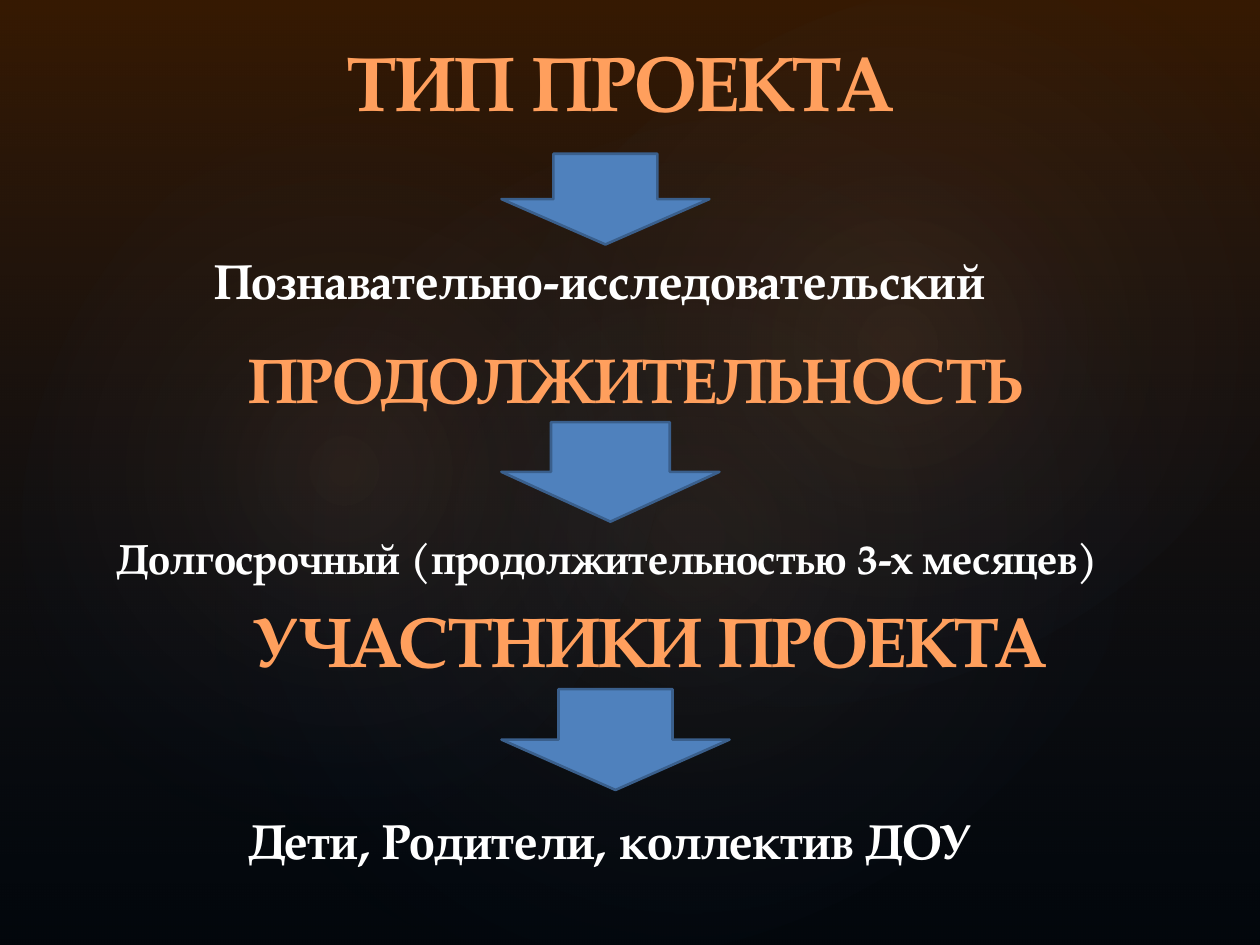
from lxml import etree
from pptx import Presentation
from pptx.dml.color import RGBColor
from pptx.enum.shapes import MSO_SHAPE
from pptx.enum.text import MSO_ANCHOR, MSO_AUTO_SIZE, PP_ALIGN
from pptx.oxml.ns import qn
from pptx.util import Inches, Pt

RECT, OVAL, DOWN_ARROW = MSO_SHAPE.RECTANGLE, MSO_SHAPE.OVAL, MSO_SHAPE.DOWN_ARROW
LEFT, CENTER = PP_ALIGN.LEFT, PP_ALIGN.CENTER
TOP, NO_AUTOFIT = MSO_ANCHOR.TOP, MSO_AUTO_SIZE.NONE
FONT = "TeX Gyre Pagella"
COLORS = {
    "black": "000000", "white": "FFFFFF", "brown": "984807", "navy": "1F497D",
    "peach": "FAC090", "arrow": "4F81BD", "arrow_line": "3A5F8C",
    "edge": "FFA367", "light": "FF9F5D", "deep": "F38E3A",
}
HEADING_STOPS = [(0, "edge", 100), (25, "light", 100), (50, "deep", 100),
                 (75, "light", 100), (100, "edge", 100)]


def rgb(name):
    return RGBColor.from_string(COLORS[name])


def set_gradient(fill, props, stops, radial=False):
    """Give props (spPr or rPr) a gradient; stops are (position, colour, opacity) with percents."""
    fill.gradient()
    grad = props.find(qn("a:gradFill"))
    grad.clear()
    grad.set("rotWithShape", "1")
    gs_list = etree.SubElement(grad, qn("a:gsLst"))
    for pos, color, opacity in stops:
        gs = etree.SubElement(gs_list, qn("a:gs"), pos=str(pos * 1000))
        clr = etree.SubElement(gs, qn("a:srgbClr"), val=COLORS[color])
        if opacity < 100:
            etree.SubElement(clr, qn("a:alpha"), val=str(opacity * 1000))
    if radial:
        circle = etree.SubElement(grad, qn("a:path"), path="circle")
        etree.SubElement(circle, qn("a:fillToRect"),
                         {side: "50000" for side in "ltrb"})
    else:
        etree.SubElement(grad, qn("a:lin"), ang="5400000", scaled="0")


def add_shape(s, kind, box):
    sp = s.shapes.add_shape(kind, *map(Inches, box))
    sp.shadow.inherit = False
    return sp


def add_backdrop(s):
    s.background.fill.solid()
    s.background.fill.fore_color.rgb = rgb("black")
    wash = add_shape(s, RECT, (0, 0, 10, 7.5))
    wash.line.fill.background()
    set_gradient(wash.fill, wash._element.spPr, [(0, "brown", 36), (100, "navy", 10)])
    for box, angle, opacity in [((1.5, 1.14, 7.92, 6.24), 328.7, 7),
                                ((-0.3, 1.28, 6.06, 4.9), 294.3, 8),
                                ((3.58, 0.13, 7.09, 5.2), 328.7, 8)]:
        glow = add_shape(s, OVAL, box)
        glow.rotation = angle
        glow.line.fill.background()
        set_gradient(glow.fill, glow._element.spPr,
                     [(0, "peach", opacity), (58, "navy", 0)], radial=True)


def write_text(sp, text, size, align):
    tf = sp.text_frame
    tf.text = text
    tf.word_wrap = True
    tf.auto_size = NO_AUTOFIT
    tf.vertical_anchor = TOP
    p = tf.paragraphs[0]
    p.alignment = align
    r = p.runs[0]
    r.font.name = FONT
    r.font.size = Pt(size)
    r.font.bold = True
    return r


def format_heading(sp, text, size):
    r = write_text(sp, text, size, CENTER)
    set_gradient(r.font.fill, r.font._element, HEADING_STOPS)


def add_title(s, text, box, size):
    title = s.shapes.title
    title.left, title.top, title.width, title.height = map(Inches, box)
    format_heading(title, text, size)
    s.shapes._spTree.append(title._element)  # bring in front of the backdrop


def add_heading(s, text, box, size):
    format_heading(s.shapes.add_textbox(*map(Inches, box)), text, size)


def add_answer(s, text, box, size):
    r = write_text(s.shapes.add_textbox(*map(Inches, box)), text, size, LEFT)
    r.font.color.rgb = rgb("white")


def add_arrow(s, top, width, height, shaft=0.5):
    arrow = add_shape(s, DOWN_ARROW, (3.98, top, width, height))
    arrow.adjustments[0] = shaft
    arrow.fill.solid()
    arrow.fill.fore_color.rgb = rgb("arrow")
    arrow.line.color.rgb = rgb("arrow_line")
    arrow.line.width = Pt(1.5)


def main():
    prs = Presentation()
    prs.slide_width, prs.slide_height = Inches(10), Inches(7.5)
    s = prs.slides.add_slide(prs.slide_layouts[5])
    add_backdrop(s)

    add_title(s, "ТИП ПРОЕКТА", (2.47, 0.22, 4.91, 0.84), 44)
    add_arrow(s, 1.22, 1.65, 0.72)
    add_answer(s, "Познавательно-исследовательский", (1.6, 1.94, 7.11, 0.57), 28)

    add_heading(s, "ПРОДОЛЖИТЕЛЬНОСТЬ", (1.66, 2.65, 6.77, 0.71), 36)
    add_arrow(s, 3.35, 1.73, 0.79, shaft=0.545)
    add_answer(s, "Долгосрочный (продолжительностью 3-х месяцев)",
               (0.83, 4.18, 8.83, 0.5), 24)

    add_heading(s, "УЧАСТНИКИ ПРОЕКТА", (1.64, 4.69, 7.02, 0.77), 40)
    add_arrow(s, 5.47, 1.81, 0.8)
    add_answer(s, "Дети, Родители, коллектив ДОУ", (1.87, 6.38, 6.52, 0.57), 28)

    prs.save("out.pptx")


if __name__ == "__main__":
    main()
